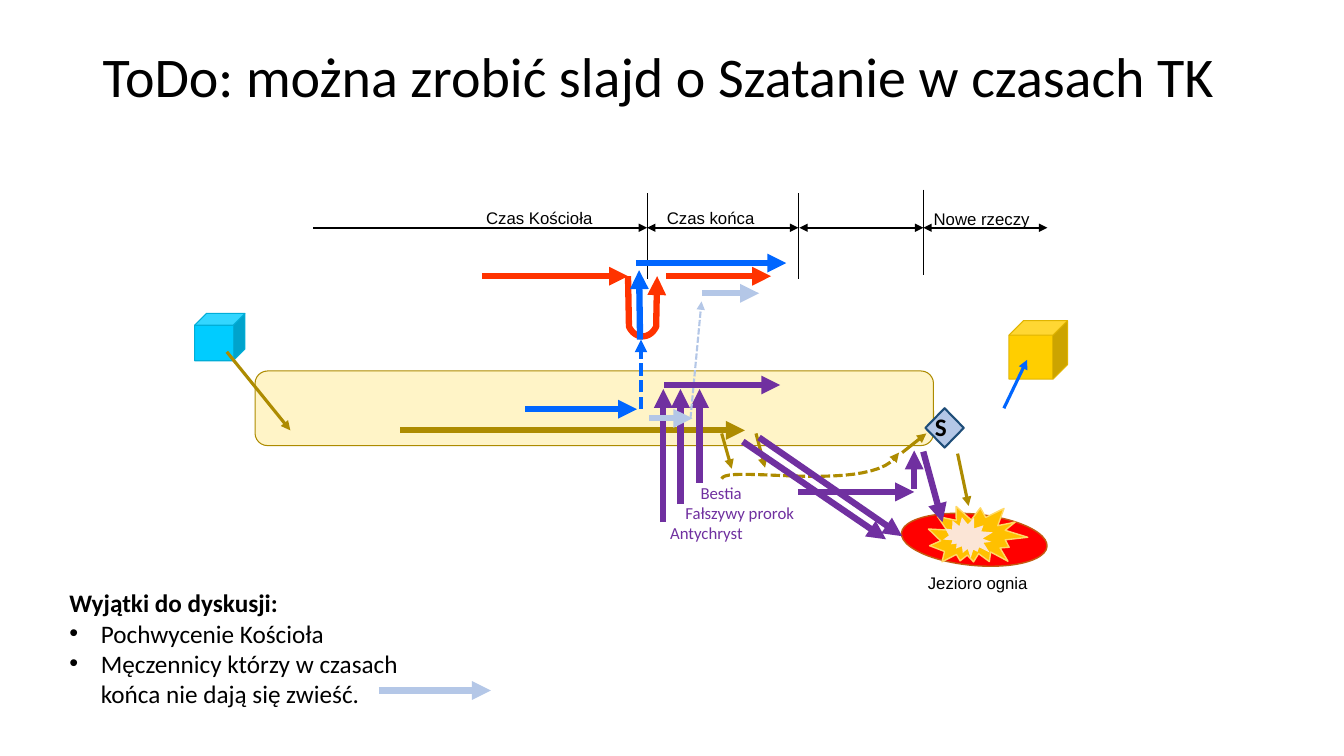
from pptx import Presentation
from pptx.dml.color import RGBColor
from pptx.enum.dml import MSO_LINE
from pptx.enum.shapes import MSO_CONNECTOR, MSO_SHAPE
from pptx.enum.text import MSO_ANCHOR, PP_ALIGN
from pptx.oxml.ns import qn
from pptx.util import Pt
from lxml import etree

STRAIGHT = MSO_CONNECTOR.STRAIGHT
DASH = MSO_LINE.SQUARE_DOT
MIDDLE = MSO_ANCHOR.MIDDLE
CENTER, LEFT = PP_ALIGN.CENTER, PP_ALIGN.LEFT
CUBE, DIAMOND = MSO_SHAPE.CUBE, MSO_SHAPE.DIAMOND
ROUNDED = MSO_SHAPE.ROUNDED_RECTANGLE
OVAL, BURST = MSO_SHAPE.FLOWCHART_CONNECTOR, MSO_SHAPE.EXPLOSION2

BLACK, GOLD, BLUE, RED = "000000", "AD8B00", "0066FF", "FF3300"
PURPLE, PALE = "7030A0", "B4C7E7"
THICK, MEDIUM, THIN = 4.5, 2.25, 1.5


def color(value):
    return RGBColor.from_string(value)


def bezier(start, first, second, end, steps=24):
    """Return points along a cubic curve."""
    points = []
    for step in range(steps + 1):
        t = step / steps
        weights = ((1 - t) ** 3, 3 * t * (1 - t) ** 2, 3 * t * t * (1 - t), t ** 3)
        corners = (start, first, second, end)
        points.append(tuple(sum(w * c[axis] for w, c in zip(weights, corners))
                            for axis in (0, 1)))
    return points


class Page:
    def __init__(self, deck):
        self.slide = deck.slides.add_slide(deck.slide_layouts[5])
        self.shapes = self.slide.shapes

    def font(self, para, size, name="Calibri", ink=BLACK, bold=False):
        para.font.size, para.font.name, para.font.bold = Pt(size), name, bold
        para.font.color.rgb = color(ink)

    def indent(self, para, left, hanging=0, bullet=None):
        props = para._p.get_or_add_pPr()
        props.set("marL", str(Pt(left)))
        props.set("indent", str(-Pt(hanging)))
        if bullet:
            etree.SubElement(props, qn("a:buFont")).set("typeface", "Arial")
            etree.SubElement(props, qn("a:buChar")).set("char", bullet)

    def title(self, text, left, top, width, height):
        box = self.shapes.title
        box.left, box.top, box.width, box.height = map(Pt, (left, top, width, height))
        frame = box.text_frame
        frame.text, frame.vertical_anchor = text, MIDDLE
        para = frame.paragraphs[0]
        para.alignment, para.line_spacing = LEFT, 0.9
        self.font(para, 40)

    def text(self, lines, left, top, width, height):
        """Add a wrapping text box and return its frame."""
        frame = self.shapes.add_textbox(*map(Pt, (left, top, width, height))).text_frame
        frame.word_wrap = True
        frame.text = "\n".join(lines)
        return frame

    def label(self, text, left, top, width):
        frame = self.text([text], left, top, width, 18.7)
        frame.vertical_anchor = MIDDLE
        frame.margin_left = frame.margin_right = Pt(2.2)
        frame.margin_top = frame.margin_bottom = Pt(2.2)
        frame.paragraphs[0].alignment = CENTER
        self.font(frame.paragraphs[0], 12, "Arial")

    def shape(self, kind, left, top, width, height, fill, line=None, weight=1, turn=0):
        box = self.shapes.add_shape(kind, *map(Pt, (left, top, width, height)))
        box.shadow.inherit = False
        box.rotation = turn
        box.fill.solid()
        box.fill.fore_color.rgb = color(fill)
        if line:
            box.line.color.rgb, box.line.width = color(line), Pt(weight)
        else:
            box.line.fill.background()
        return box

    def stroke(self, item, ink, weight, dashed, ends):
        """Style a line; ends lists the arrowheads, headEnd and tailEnd."""
        item.line.color.rgb, item.line.width = color(ink), Pt(weight)
        if dashed:
            item.line.dash_style = DASH
        for end in ends:
            etree.SubElement(item.line._get_or_add_ln(), qn("a:" + end)).set("type", "triangle")

    def arrow(self, x1, y1, x2, y2, ink, weight=THICK, dashed=False, ends=("tailEnd",)):
        line = self.shapes.add_connector(STRAIGHT, *map(Pt, (x1, y1, x2, y2)))
        self.stroke(line, ink, weight, dashed, ends)
        etree.SubElement(line._element.spPr, qn("a:effectLst"))

    def curve(self, points, ink, weight, dashed=False):
        points = [(Pt(x), Pt(y)) for x, y in points]
        builder = self.shapes.build_freeform(*points[0])
        builder.add_line_segments(points[1:], close=False)
        outline = builder.convert_to_shape()
        outline.shadow.inherit = False
        outline.fill.background()
        self.stroke(outline, ink, weight, dashed, ("tailEnd",))


def draw_timeline(page):
    axis = 162.7
    page.arrow(223.9, axis, 462.2, axis, BLACK, THIN)
    for start, end in ((462.2, 570.2), (571, 659.5), (659.5, 748.1)):
        page.arrow(start, axis, end, axis, BLACK, THIN, ends=("headEnd", "tailEnd"))
    for x, top in ((462.2, 138.2), (570.2, 138.2), (659.5, 135.4)):
        page.arrow(x, top, x, top + 61.2, BLACK, 0.5, ends=())
    page.label("Czas Kościoła", 333.4, 146.2, 103.7)
    page.label("Czas końca", 466.6, 146.2, 82.1)
    page.label("Nowe rzeczy", 659.5, 146.9, 83.5)


def draw_satan(page):
    page.curve(bezier((515.5, 342), (518.4, 331.2), (626.4, 354.2), (642.2, 323.3)),
               GOLD, MEDIUM, dashed=True)
    diamond = page.shape(DIAMOND, 661, 291.6, 27.4, 28.1, PALE, "1F4E79", 1.5)
    frame = diamond.text_frame
    frame.text, frame.vertical_anchor = "S", MIDDLE
    frame.margin_left = frame.margin_right = 0
    frame.margin_top = frame.margin_bottom = Pt(2.9)
    para = frame.paragraphs[0]
    para.alignment, para.line_spacing = LEFT, 0.9
    page.indent(para, 20.2, 20.2)
    page.font(para, 18, bold=True)
    page.shape(CUBE, 720.7, 229, 41.8, 41.8, "FFCE00", "E0B400", 0.75)
    page.shape(CUBE, 139, 223.9, 36, 33.8, "00CCFF", "00AED8", 0.75)
    for points in ((644.4, 323.3, 661.7, 309.6), (540, 309.6, 546.5, 334.1),
                   (684, 324, 691.9, 361.4), (162, 251.3, 207.4, 307.4),
                   (515.5, 309.6, 522.7, 334.8)):
        page.arrow(*points, GOLD, MEDIUM)
    page.arrow(717.1, 291.6, 733.7, 257, BLUE, MEDIUM)


def draw_lake(page):
    page.shape(OVAL, 643.7, 367.2, 104.4, 36.7, "FF0000", "C55A11", turn=5.4)
    page.shape(BURST, 663.1, 358.6, 69.8, 49, "FFC000", "FFD966", turn=16.2)
    page.shape(BURST, 675.4, 367.9, 33.8, 32.4, "FBE5D6", turn=56.2)
    page.label("Jezioro ognia", 646.6, 406.8, 103.7)


def draw_beasts(page):
    for x, start in ((473.8, 373), (486, 360), (499.7, 344.9)):
        page.arrow(x, start, x, 277.9, PURPLE)
    frame = page.text(["Bestia", "Fałszywy prorok", "Antychryst"], 471.6, 341.3, 168.5, 51.1)
    for para, left in zip(frame.paragraphs, (21.7, 10.85, 0)):
        page.indent(para, left)
        page.font(para, 12, ink=PURPLE)


def draw_church(page):
    page.arrow(375.1, 292.3, 455, 292.3, BLUE)
    bend = bezier((449.3, 233.3), (453.6, 242.6), (464.4, 242.6), (468.7, 233.3))
    page.curve([(448.6, 197.3), *bend, (469.4, 197.3)], RED, THICK)
    page.arrow(457.2, 242.6, 456.5, 193, BLUE)
    page.arrow(457.9, 292.3, 457.9, 242.6, BLUE, 3, dashed=True)
    page.arrow(454.3, 187.9, 561.6, 187.9, BLUE)
    for start, end in ((475.9, 550.8), (344.2, 448.6)):
        page.arrow(start, 197.3, end, 197.3, RED)


def draw_notes(page):
    frame = page.text(["Wyjątki do dyskusji:", "Pochwycenie Kościoła",
                       "Męczennicy którzy w czasach końca nie dają\u00a0się zwieść."],
                      42.5, 416.2, 268.6, 94.3)
    heading, *items = frame.paragraphs
    page.font(heading, 18, bold=True)
    for item in items:
        page.indent(item, 22.5, 22.5, "•")
        page.font(item, 18)


def draw_martyrs_and_fall(page):
    page.arrow(493.2, 298.8, 501.1, 215.3, PALE, THIN, dashed=True)
    for start, end, y in ((270.7, 350.6, 493.2), (501.8, 542.2, 209.5), (463.7, 494.6, 298.8)):
        page.arrow(start, y, end, y, PALE)
    for points in ((474.5, 275, 557.3, 275), (570.2, 351.4, 653, 351.4),
                   (659.5, 322.6, 673.2, 373), (653, 349.2, 653, 321.8),
                   (542.2, 312.5, 644.4, 383), (530.6, 315.4, 632.9, 385.2)):
        page.arrow(*points, PURPLE)


def main():
    deck = Presentation()
    deck.slide_width, deck.slide_height = Pt(960), Pt(540)
    page = Page(deck)
    page.title("ToDo: można zrobić slajd o Szatanie w czasach TK", 66.2, 28.8, 828, 56.2)
    page.shape(ROUNDED, 182.2, 265, 484.6, 53.3, "FFF4C7", GOLD, 0.75)
    page.arrow(285.8, 307.4, 532.1, 307.4, GOLD)
    for draw in (draw_timeline, draw_satan, draw_lake, draw_beasts, draw_church,
                 draw_notes, draw_martyrs_and_fall):
        draw(page)
    deck.save("out.pptx")


if __name__ == "__main__":
    main()
